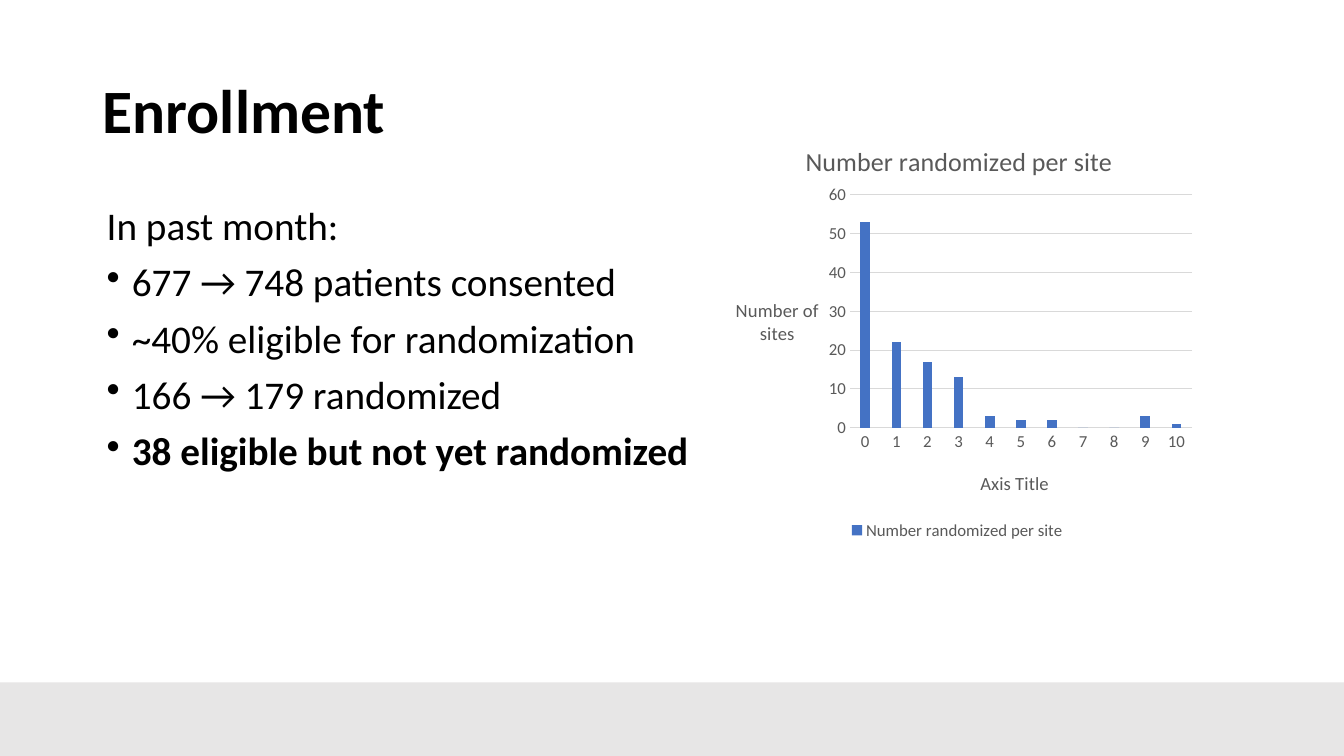
import pptx
import pptx.chart.data
import pptx.dml.color
import pptx.enum.chart
import pptx.enum.shapes
import pptx.enum.text
import pptx.oxml
import pptx.oxml.ns
import pptx.util

Inches = pptx.util.Inches
Pt = pptx.util.Pt
qn = pptx.oxml.ns.qn

COLORS = {
    "text": "000000",
    "band": "E7E6E6",
    "label": "595959",
    "grid": "D9D9D9",
    "bar": "4472C4",
}


class Deck:
    face = "Calibri"

    def __init__(self):
        self.file = pptx.Presentation()
        self.file.slide_width = Inches(13.33)
        self.file.slide_height = Inches(7.5)
        self.slide = self.file.slides.add_slide(self.file.slide_layouts[6])

    def color(self, name):
        return pptx.dml.color.RGBColor.from_string(COLORS[name])

    def style(self, font, size, name, bold=False):
        font.name = self.face
        font.size = Pt(size)
        font.bold = bold
        font.color.rgb = self.color(name)

    def band(self, *box):
        shape = self.slide.shapes.add_shape(
            pptx.enum.shapes.MSO_SHAPE.RECTANGLE, *map(Inches, box))
        shape.shadow.inherit = False
        shape.fill.solid()
        shape.fill.fore_color.rgb = self.color("band")
        shape.line.fill.background()

    def text(self, box, lines, size, anchor):
        frame = self.slide.shapes.add_textbox(*map(Inches, box)).text_frame
        frame.word_wrap = True
        frame.vertical_anchor = anchor
        for index, (words, bullet, bold) in enumerate(lines):
            para = frame.add_paragraph() if index else frame.paragraphs[0]
            para.text = words
            para.line_spacing = 0.9
            if index:
                para.space_before = Pt(10)
            if bullet:
                props = para._p.get_or_add_pPr()
                props.set("marL", str(Inches(0.25)))
                props.set("indent", str(-Inches(0.25)))
                mark = pptx.oxml.parse_xml(
                    f'<a:buChar {pptx.oxml.ns.nsdecls("a")} char="•"/>')
                props.append(mark)
            self.style(para.font, size, "text", bold)

    def place(self, part, index, inner="", **edges):
        old = part.find(qn("c:layout"))
        if old is not None:
            part.remove(old)
        modes = "".join(f'<c:{key}Mode val="edge"/>' for key in "xy")
        sizes = "".join(f'<c:{key} val="{val}"/>' for key, val in edges.items())
        part.insert(index, pptx.oxml.parse_xml(
            f'<c:layout {pptx.oxml.ns.nsdecls("c")}><c:manualLayout>'
            f'{inner}{modes}{sizes}</c:manualLayout></c:layout>'))

    def label(self, owner, words, size):
        frame = owner.text_frame
        frame.text = words
        frame._txBody.bodyPr.set("rot", "0")
        frame._txBody.bodyPr.set("vert", "horz")
        self.style(frame.paragraphs[0].font, size, "label")

    def axis(self, axis, title):
        axis.has_title = True
        self.label(axis.axis_title, title, 13.3)
        axis.major_tick_mark = pptx.enum.chart.XL_TICK_MARK.NONE
        axis.minor_tick_mark = pptx.enum.chart.XL_TICK_MARK.NONE
        self.style(axis.tick_labels.font, 12, "label")

    def rule(self, line):
        line.color.rgb = self.color("grid")
        line.width = Pt(0.75)

    def chart(self, box, name, cats, vals):
        data = pptx.chart.data.CategoryChartData()
        data.categories = cats
        data.add_series(name, vals)
        chart = self.slide.shapes.add_chart(
            pptx.enum.chart.XL_CHART_TYPE.COLUMN_CLUSTERED,
            *map(Inches, box), data).chart
        self.style(chart.font, 10, "text")
        chart.has_title = True
        self.label(chart.chart_title, name, 18.6)
        chart.has_legend = True
        chart.legend.position = pptx.enum.chart.XL_LEGEND_POSITION.BOTTOM
        chart.legend.include_in_layout = False
        self.style(chart.legend.font, 12, "label")

        base, side = chart.category_axis, chart.value_axis
        self.axis(base, "Axis Title")
        self.axis(side, "Number of sites")
        base.has_major_gridlines = False
        self.rule(base.format.line)
        side.format.line.fill.background()
        side.minimum_scale, side.maximum_scale, side.major_unit = 0, 60, 10
        side.has_major_gridlines = True
        self.rule(side.major_gridlines.format.line)

        plot = chart.plots[0]
        plot.gap_width = 219
        plot.overlap = -27
        plot.vary_by_categories = False
        fill = plot.series[0].format.fill
        fill.solid()
        fill.fore_color.rgb = self.color("bar")

        area = chart._chartSpace.chart.plotArea
        inner = '<c:layoutTarget val="inner"/>'
        self.place(area, 0, inner, x=0.28, y=0.19, w=0.7, h=0.54)
        spots = [(0.18, 0.06), (0.54, 0.82), (0.04, 0.42)]
        for title, (x, y) in zip(chart._chartSpace.iter(qn("c:title")), spots):
            self.place(title, 1, x=x, y=y)


def main():
    deck = Deck()
    anchor = pptx.enum.text.MSO_ANCHOR
    deck.band(0, 6.77, 13.33, 0.73)
    deck.text((0.92, 0.4, 11.5, 1.45), [("Enrollment", False, True)],
              44, anchor.MIDDLE)
    deck.text((0.96, 2, 11.29, 4.14), [
        ("In past month:", False, False),
        ("677 → 748 patients consented", True, False),
        ("~40% eligible for randomization", True, False),
        ("166 → 179 randomized", True, False),
        ("38 eligible but not yet randomized", True, True),
    ], 28, anchor.TOP)
    deck.chart((7.07, 1.12, 4.85, 4.28), "Number randomized per site",
               [str(count) for count in range(11)],
               [53, 22, 17, 13, 3, 2, 2, 0, 0, 3, 1])
    deck.file.save("out.pptx")


if __name__ == "__main__":
    main()
